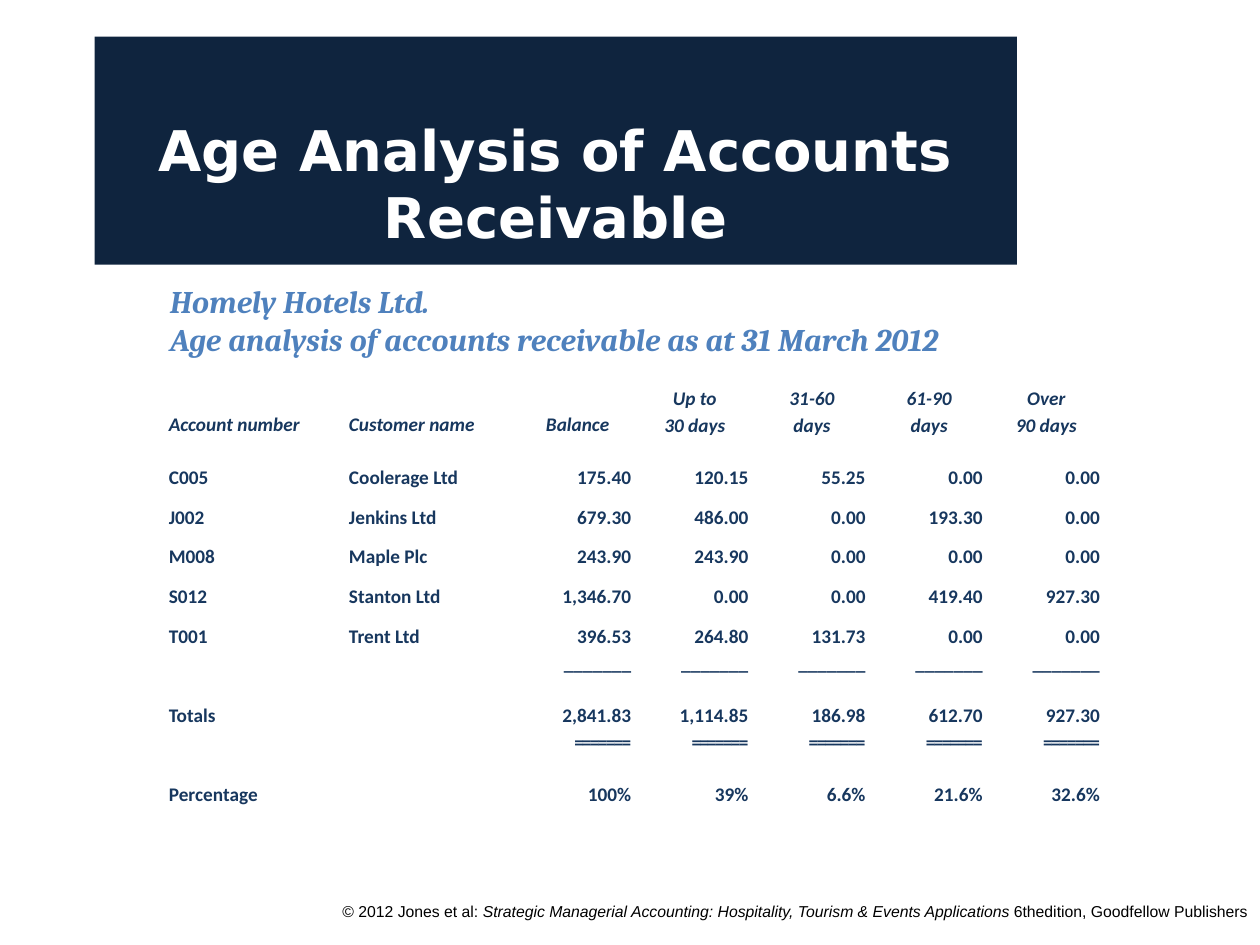
import pptx
import pptx.util
import pptx.dml.color
import pptx.enum.shapes
import pptx.enum.text

Inches = pptx.util.Inches
Pt = pptx.util.Pt
RGBColor = pptx.dml.color.RGBColor
PP_ALIGN = pptx.enum.text.PP_ALIGN
MSO_ANCHOR = pptx.enum.text.MSO_ANCHOR

NAVY = RGBColor(0x0F, 0x24, 0x3E)
INK = RGBColor(0x17, 0x37, 0x5E)
BLUE = RGBColor(0x4F, 0x81, 0xBD)
WHITE = RGBColor(0xFF, 0xFF, 0xFF)
BLACK = RGBColor(0x00, 0x00, 0x00)

RULE = "_______"
DOUBLE_RULE = "======="
HEADER = ["Account number", "Customer name", "Balance", "Up to\n30 days",
          "31-60\ndays", "61-90\ndays", "Over\n90 days"]
ACCOUNTS = [
    ["C005", "Coolerage Ltd", "175.40", "120.15", "55.25", "0.00", "0.00"],
    ["J002", "Jenkins Ltd", "679.30", "486.00", "0.00", "193.30", "0.00"],
    ["M008", "Maple Plc", "243.90", "243.90", "0.00", "0.00", "0.00"],
    ["S012", "Stanton Ltd", "1,346.70", "0.00", "0.00", "419.40", "927.30"],
    ["T001", "Trent Ltd", "396.53", "264.80", "131.73", "0.00", "0.00"],
]
TOTALS = ["Totals", "", "2,841.83", "1,114.85", "186.98", "612.70", "927.30"]
PERCENTAGES = ["Percentage", "", "100%", "39%", "6.6%", "21.6%", "32.6%"]


def underline(row, rule):
    return row[:2] + [f"{value}\n{rule}" for value in row[2:]]


class SlideBuilder:
    """Hold the text styles and the current slide, and add its elements."""

    styles = {
        "title": {"name": "DejaVu Sans", "size": Pt(32), "bold": True, "color": WHITE},
        "subtitle": {"name": "Cambria", "size": Pt(18), "bold": True, "italic": True,
                     "color": BLUE},
        "header": {"name": "Calibri", "size": Pt(11), "bold": True, "italic": True,
                   "color": INK},
        "body": {"name": "Calibri", "size": Pt(11), "bold": True, "italic": False,
                 "color": INK},
        "footer": {"name": "Arial", "size": Pt(9), "italic": False, "color": BLACK},
        "citation": {"name": "Arial", "size": Pt(9), "italic": True, "color": BLACK},
    }

    def __init__(self, prs):
        self.slide = prs.slides.add_slide(prs.slide_layouts[6])

    def run(self, p, text, style):
        r = p.add_run()
        r.text = text
        for key, value in self.styles[style].items():
            if key == "color":
                r.font.color.rgb = value
            else:
                setattr(r.font, key, value)
        return r

    def frame(self, tf, **formats):
        tf.word_wrap = True
        for key, value in formats.items():
            setattr(tf, key, value)

    def banner(self, text, *box):
        sp = self.slide.shapes.add_shape(
            pptx.enum.shapes.MSO_SHAPE.RECTANGLE, *map(Inches, box))
        sp.shadow.inherit = False
        sp.fill.solid()
        sp.fill.fore_color.rgb = NAVY
        sp.line.fill.background()
        self.frame(sp.text_frame, vertical_anchor=MSO_ANCHOR.BOTTOM,
                   margin_bottom=Inches(0.12))
        p = sp.text_frame.paragraphs[0]
        p.alignment = PP_ALIGN.CENTER
        self.run(p, text, "title")

    def text(self, paragraphs, *box, align=PP_ALIGN.LEFT, **formats):
        tf = self.slide.shapes.add_textbox(*map(Inches, box)).text_frame
        self.frame(tf, **formats)
        for i, runs in enumerate(paragraphs):
            p = tf.add_paragraph() if i else tf.paragraphs[0]
            p.alignment = align
            for text, style in runs:
                self.run(p, text, style)

    def cell(self, cell, text, header, numeric):
        cell.fill.background()
        single_header = header and "\n" not in text
        margins = {"margin_left": 0.04, "margin_right": 0.04, "margin_bottom": 0,
                   "margin_top": 0.21 if single_header else 0}
        for key, value in margins.items():
            setattr(cell, key, Inches(value))
        if not text:
            return
        p = cell.text_frame.paragraphs[0]
        align = PP_ALIGN.CENTER if header else PP_ALIGN.RIGHT
        formats = {"alignment": align if numeric else PP_ALIGN.LEFT,
                   "line_spacing": 1.15, "space_after": Pt(2),
                   "space_before": Pt(0 if header else 2)}
        for key, value in formats.items():
            setattr(p, key, value)
        for i, line in enumerate(text.split("\n")):
            if i:
                p.add_line_break()
            r = self.run(p, line, "header" if header else "body")
            if line == DOUBLE_RULE:
                r._r.get_or_add_rPr().set("spc", "-100")

    def table(self, rows, widths, heights, *box):
        table = self.slide.shapes.add_table(
            len(rows), len(widths), *map(Inches, box)).table
        table.first_row = table.horz_banding = False
        for column, width in zip(table.columns, widths):
            column.width = Inches(width)
        for i, (row, height) in enumerate(zip(rows, heights)):
            table.rows[i].height = Inches(height)
            for j, text in enumerate(row):
                self.cell(table.cell(i, j), text, header=i == 0, numeric=j > 1)


def main():
    prs = pptx.Presentation()
    prs.slide_width, prs.slide_height = Inches(10), Inches(7.5)
    s = SlideBuilder(prs)
    s.text([[("© 2012 Jones et al: ", "footer"),
             ("Strategic Managerial Accounting: Hospitality, Tourism & Events "
              "Applications ", "citation"),
             ("6thedition, Goodfellow Publishers", "footer")]],
           2.23, 7.11, 7.77, 0.39, align=PP_ALIGN.RIGHT)
    s.banner("Age Analysis of Accounts Receivable", 0.75, 0.29, 7.32, 1.81)
    rows = [HEADER, *ACCOUNTS[:-1], underline(ACCOUNTS[-1], RULE),
            underline(TOTALS, DOUBLE_RULE), PERCENTAGES]
    s.table(rows, [1.43, 1.39] + [0.93] * 5,
            [0.63] + [0.315] * 4 + [0.63] * 2 + [0.315], 1.3, 3.04, 7.48, 3.46)
    s.text([[("Homely Hotels Ltd.", "subtitle")],
            [("Age analysis of accounts receivable as at 31 March 2012", "subtitle")]],
           0.75, 2.1, 7.61, 1.05, margin_left=Inches(0.6),
           margin_top=Inches(0.14), margin_bottom=0)
    prs.save("out.pptx")


if __name__ == "__main__":
    main()
